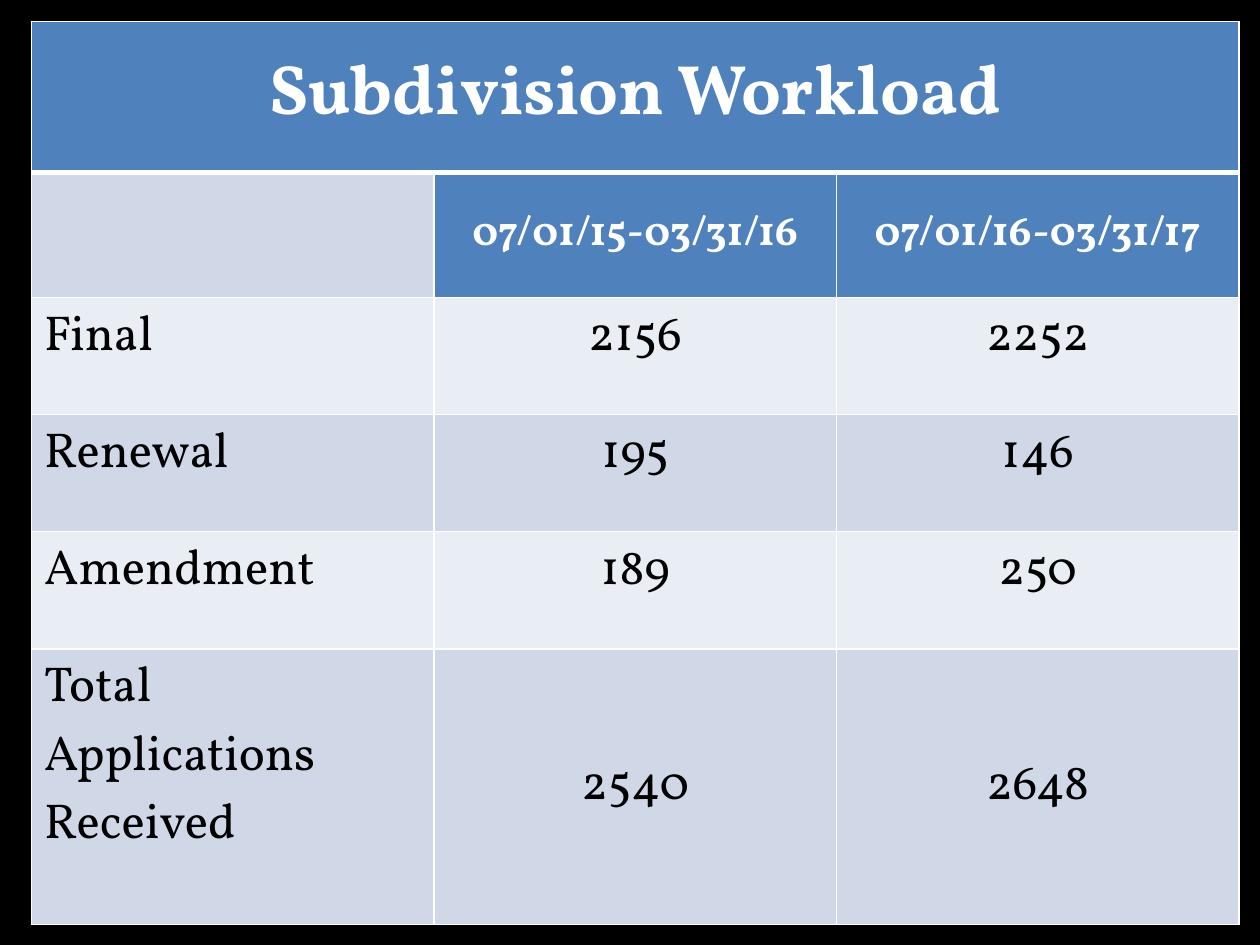
from lxml.etree import SubElement
from pptx import Presentation
from pptx.dml.color import RGBColor
from pptx.enum.text import MSO_ANCHOR as Anchor, PP_ALIGN as Align
from pptx.oxml.ns import qn
from pptx.util import Pt

TITLE = "Subdivision Workload"
PERIODS = ["", "07/01/15-03/31/16", "07/01/16-03/31/17"]
APPLICATIONS = [
    ["Final", "2156", "2252"],
    ["Renewal", "195", "146"],
    ["Amendment", "189", "250"],
    ["Total Applications Received", "2540", "2648"],
]
ROWS = [[TITLE, "", ""], PERIODS, *APPLICATIONS]

FONT = "Vollkorn"
BLACK = RGBColor(0x00, 0x00, 0x00)
WHITE = RGBColor(0xFF, 0xFF, 0xFF)
BLUE = RGBColor(0x4F, 0x81, 0xBD)
DARK_BAND = RGBColor(0xD0, 0xD8, 0xE8)
LIGHT_BAND = RGBColor(0xE9, 0xED, 0xF4)

LEFT, TOP = 18, 12.2
COLUMN_WIDTH = 230
ROW_HEIGHTS = [86.4, 71.3, 67, 67, 67, 157.6]
TITLE_SIZE, PERIOD_SIZE, BODY_SIZE = 40, 24, 28
THIN, THICK = 1, 3


def set_borders(cell, widths):
    """Draw white borders; call before filling, as lines precede the fill."""
    properties = cell._tc.get_or_add_tcPr()
    for side, width in widths.items():
        line = SubElement(properties, qn(f"a:ln{side}"), w=str(Pt(width)))
        fill = SubElement(line, qn("a:solidFill"))
        SubElement(fill, qn("a:srgbClr"), val=str(WHITE))


def format_cell(cell, row, column):
    is_header = row == 0 or (row == 1 and column > 0)
    is_total = row == len(ROWS) - 1
    set_borders(cell, {
        "L": THIN,
        "R": THIN,
        "T": THICK if row == 1 else THIN,
        "B": THICK if row == 0 else THIN,
    })
    cell.fill.solid()
    band = DARK_BAND if row % 2 else LIGHT_BAND
    cell.fill.fore_color.rgb = BLUE if is_header else band
    if is_header or (is_total and column > 0):
        cell.vertical_anchor = Anchor.MIDDLE

    cell.text_frame.text = ROWS[row][column]
    paragraph = cell.text_frame.paragraphs[0]
    paragraph.alignment = Align.CENTER if is_header or column > 0 else Align.LEFT
    font = paragraph.font
    for run in paragraph.runs:
        font = run.font
    font.name = FONT
    font.size = Pt({0: TITLE_SIZE, 1: PERIOD_SIZE}.get(row, BODY_SIZE))
    font.bold = is_header
    font.color.rgb = WHITE if is_header else BLACK


presentation = Presentation()
presentation.slide_width, presentation.slide_height = Pt(720), Pt(540)
slide = presentation.slides.add_slide(presentation.slide_layouts[6])
slide.background.fill.solid()
slide.background.fill.fore_color.rgb = BLACK

workload = slide.shapes.add_table(
    len(ROWS), len(PERIODS), Pt(LEFT), Pt(TOP),
    Pt(COLUMN_WIDTH * len(PERIODS)), Pt(sum(ROW_HEIGHTS)),
).table
for table_column in workload.columns:
    table_column.width = Pt(COLUMN_WIDTH)
for table_row, height in zip(workload.rows, ROW_HEIGHTS):
    table_row.height = Pt(height)
for row in range(len(ROWS)):
    for column in range(len(PERIODS)):
        format_cell(workload.cell(row, column), row, column)
workload.cell(0, 0).merge(workload.cell(0, len(PERIODS) - 1))

presentation.save("out.pptx")
